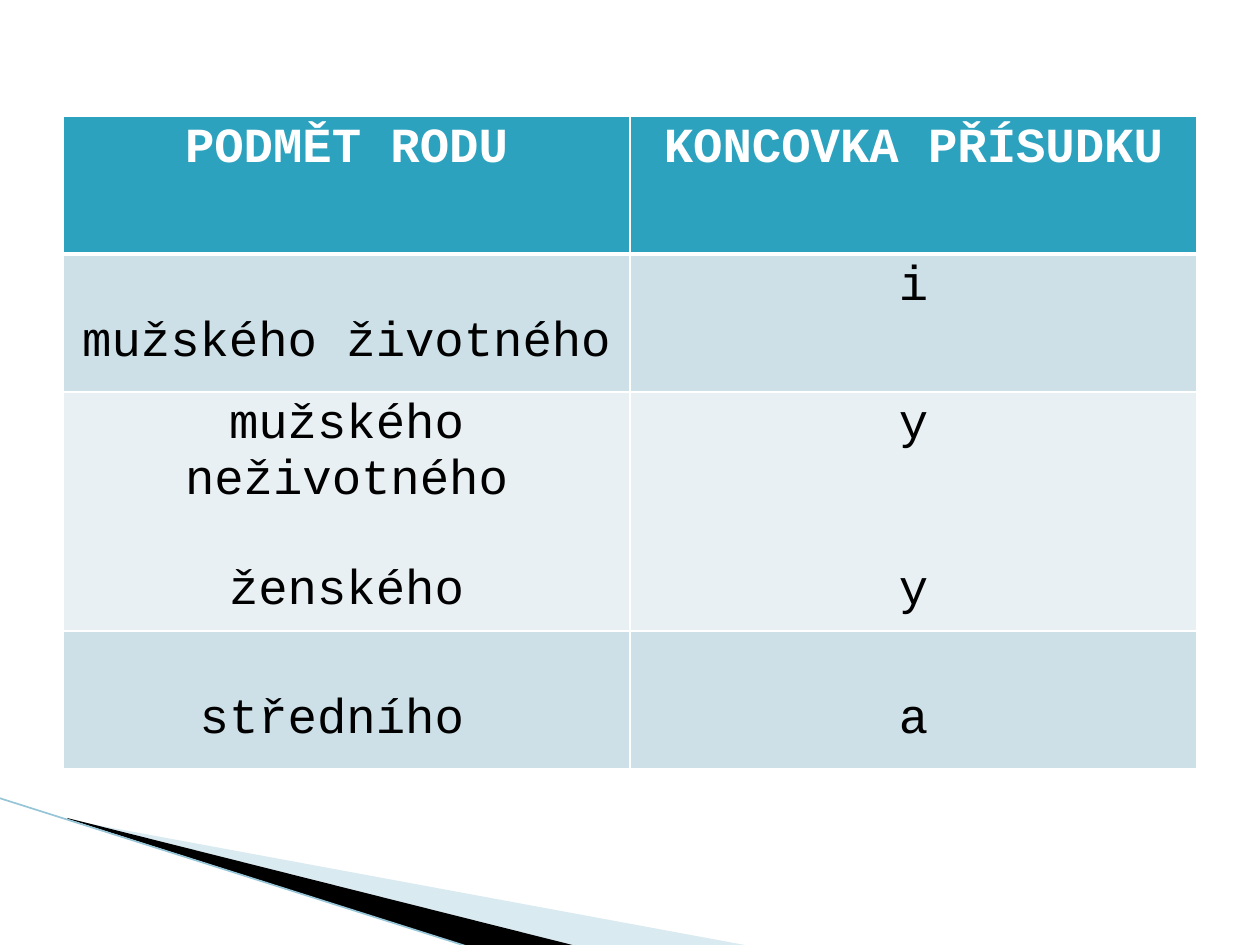
from dataclasses import dataclass

from lxml.etree import SubElement
from pptx import Presentation
from pptx.dml.color import RGBColor
from pptx.enum.shapes import MSO_CONNECTOR as Connector
from pptx.enum.text import PP_ALIGN as Align
from pptx.oxml import parse_xml
from pptx.oxml.ns import nsdecls, qn
from pptx.util import Emu, Pt

EMU_PER_PX = 914400 / 126


@dataclass(frozen=True)
class Theme:
    font: str = "Courier New"
    size: int = 28
    line_height: float = 31.7
    white: str = "FFFFFF"
    black: str = "000000"
    header: str = "2DA2BF"
    band_dark: str = "CDE0E8"
    band_light: str = "E8F0F4"
    wedge: str = "A0CBDC"
    edge: str = "97C5D8"
    edge_width: float = 0.95
    border: int = 1
    header_border: int = 3


@dataclass(frozen=True)
class Entry:
    """Cell text, with the number of lines left free above each paragraph."""
    lines: tuple[str, ...]
    gaps: tuple[int, ...] = (0,)


@dataclass(frozen=True)
class Row:
    height: int
    fill: str
    entries: tuple[Entry, Entry]


@dataclass(frozen=True)
class Wedge:
    points: tuple[tuple[int, int], ...]
    color: str
    opacity: int = 100


THEME = Theme()
LINE_PX = 56
MARGIN_PX = 6
TABLE_LEFT, TABLE_TOP, COLUMN_WIDTH = 63, 116, 567

WEDGES = (
    Wedge(((69, 820), (750, 946), (575, 946), (69, 819)), THEME.wedge, 40),
    Wedge(((67, 818), (576, 946), (469, 947), (68, 819)), THEME.black),
)
ROWS = (
    Row(138, THEME.header, (Entry(("PODMĚT RODU",)), Entry(("KONCOVKA PŘÍSUDKU",)))),
    Row(138, THEME.band_dark, (Entry(("mužského životného",), (1,)), Entry(("i",)))),
    Row(239, THEME.band_light, (Entry(("mužského neživotného", "ženského"), (0, 1)),
                                Entry(("y", "y"), (0, 2)))),
    Row(138, THEME.band_dark, (Entry(("středního ",), (1,)), Entry(("a",), (1,)))),
)


def px(value: int) -> Emu:
    return Emu(round(value * EMU_PER_PX))


def rgb(color: str) -> RGBColor:
    return RGBColor.from_string(color)


def write_text(paragraph, text: str, *, color: str, bold: bool = False,
               space_before: float = 0) -> None:
    paragraph.alignment = Align.CENTER
    if space_before:
        paragraph.space_before = Pt(space_before)
    run = paragraph.add_run()
    run.text = text
    font = run.font
    font.name, font.size, font.bold = THEME.font, Pt(THEME.size), bold
    font.color.rgb = rgb(color)


def draw_wedge(slide, wedge: Wedge) -> None:
    points = [(px(x), px(y)) for x, y in wedge.points]
    builder = slide.shapes.build_freeform(*points[0])
    builder.add_line_segments(points[1:], close=True)
    shape = builder.convert_to_shape()
    shape.shadow.inherit = False
    shape.line.fill.background()
    shape.fill.solid()
    shape.fill.fore_color.rgb = rgb(wedge.color)
    if wedge.opacity < 100:
        color = shape.fill._xPr.find(f".//{qn('a:srgbClr')}")
        SubElement(color, qn("a:alpha"), val=str(wedge.opacity * 1000))


def draw_edge(slide) -> None:
    line = slide.shapes.add_connector(Connector.STRAIGHT, px(-1), px(798), px(469), px(947))
    line.line.color.rgb = rgb(THEME.edge)
    line.line.width = Pt(THEME.edge_width)
    SubElement(line._element.spPr, qn("a:effectLst"))


def set_borders(cell, *, top: int, bottom: int) -> None:
    properties = cell._tc.get_or_add_tcPr()
    widths = {"lnL": THEME.border, "lnR": THEME.border, "lnT": top, "lnB": bottom}
    for index, (side, width) in enumerate(widths.items()):
        properties.insert(index, parse_xml(
            f'<a:{side} {nsdecls("a")} w="{Pt(width)}"><a:solidFill>'
            f'<a:srgbClr val="{THEME.white}"/></a:solidFill></a:{side}>'))


def fill_cell(cell, entry: Entry, *, fill: str, is_header: bool) -> None:
    cell.fill.solid()
    cell.fill.fore_color.rgb = rgb(fill)
    cell.margin_top = px(MARGIN_PX + entry.gaps[0] * LINE_PX)
    frame = cell.text_frame
    for index, (text, gap) in enumerate(zip(entry.lines, entry.gaps)):
        paragraph = frame.add_paragraph() if index else frame.paragraphs[0]
        write_text(paragraph, text, bold=is_header,
                   color=THEME.white if is_header else THEME.black,
                   space_before=gap * THEME.line_height if index else 0)


def draw_table(slide, rows: tuple[Row, ...]) -> None:
    columns = len(rows[0].entries)
    table = slide.shapes.add_table(
        len(rows), columns, px(TABLE_LEFT), px(TABLE_TOP),
        px(COLUMN_WIDTH * columns), px(sum(row.height for row in rows))).table
    for column in table.columns:
        column.width = px(COLUMN_WIDTH)
    for row_index, row in enumerate(rows):
        table.rows[row_index].height = px(row.height)
        for column_index, entry in enumerate(row.entries):
            cell = table.cell(row_index, column_index)
            fill_cell(cell, entry, fill=row.fill, is_header=row_index == 0)
            set_borders(cell,
                        top=THEME.header_border if row_index == 1 else THEME.border,
                        bottom=THEME.header_border if row_index == 0 else THEME.border)


def main() -> None:
    presentation = Presentation()
    presentation.slide_width, presentation.slide_height = px(1260), px(945)
    slide = presentation.slides.add_slide(presentation.slide_layouts[6])

    # Corner decoration
    for wedge in WEDGES:
        draw_wedge(slide, wedge)
    draw_edge(slide)

    # Table of subject genders and predicate endings
    draw_table(slide, ROWS)
    presentation.save("out.pptx")


if __name__ == "__main__":
    main()
